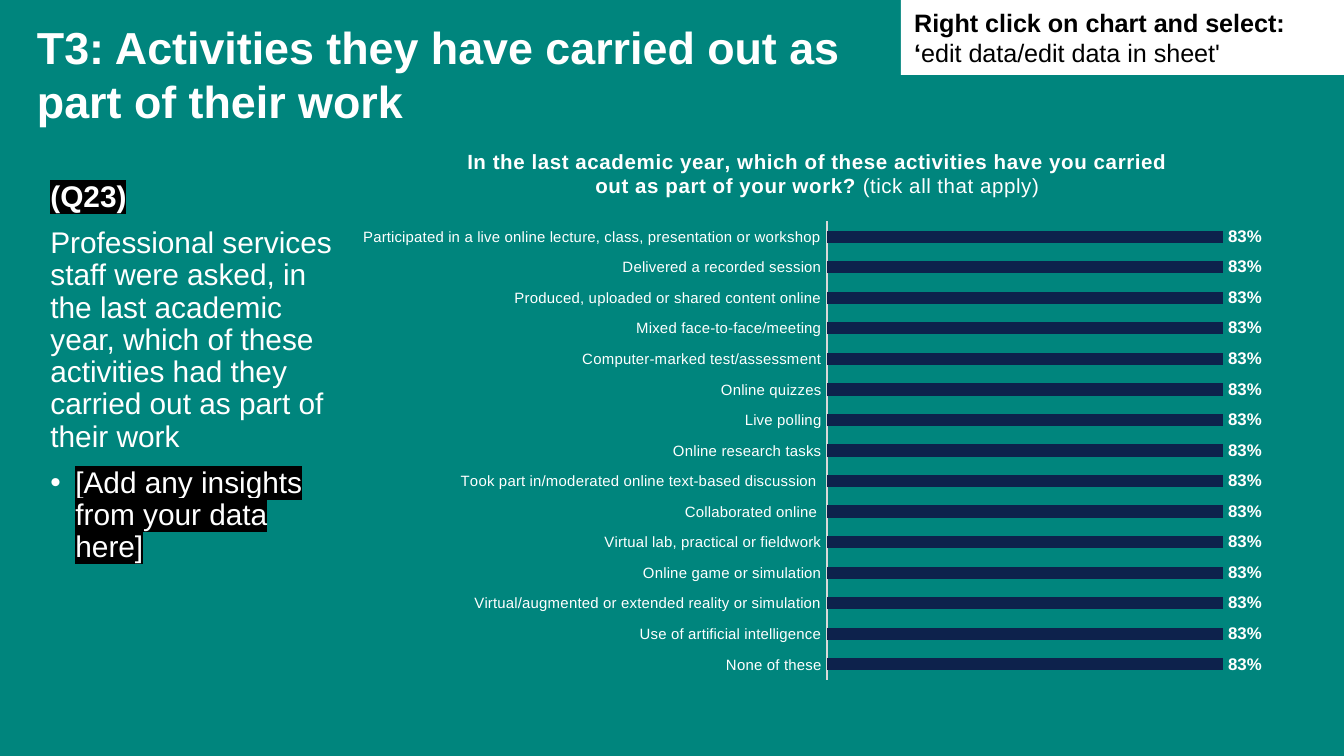
from lxml.etree import SubElement, fromstring
from pptx import Presentation
from pptx.chart.data import CategoryChartData
from pptx.dml.color import RGBColor
from pptx.enum.chart import XL_CHART_TYPE, XL_LABEL_POSITION, XL_TICK_MARK
from pptx.enum.shapes import MSO_SHAPE
from pptx.enum.text import MSO_ANCHOR, MSO_AUTO_SIZE, PP_ALIGN
from pptx.oxml.ns import nsdecls, qn
from pptx.util import Pt

PX = 914400 / 134.4
TEAL = RGBColor(0x00, 0x85, 0x7D)
NAVY = RGBColor(0x0D, 0x22, 0x4C)
GREY = RGBColor(0xD9, 0xD9, 0xD9)
WHITE = RGBColor(0xFF, 0xFF, 0xFF)
BLACK = RGBColor(0x00, 0x00, 0x00)


def set_font(font, size, bold=False, color=WHITE):
    font.name = "Arial"
    font.size = Pt(size)
    font.bold = bold
    font.color.rgb = color


def set_layout(element, index, **fractions):
    for layout in element.findall(qn("c:layout")):
        element.remove(layout)
    values = "".join(f'<c:{key} val="{value}"/>' for key, value in fractions.items())
    element.insert(index, fromstring(
        f'<c:layout {nsdecls("c")}><c:manualLayout>{values}</c:manualLayout></c:layout>'))


deck = Presentation()
deck.slide_width = round(1344 * PX)
deck.slide_height = round(756 * PX)
slide = deck.slides.add_slide(deck.slide_layouts[1])
slide.background.fill.solid()
slide.background.fill.fore_color.rgb = TEAL

title = slide.shapes.title
body = slide.placeholders[1]
for box, frame in ((title, (37, 20, 809, 50)), (body, (37, 175, 317, 532))):
    box.left, box.top, box.width, box.height = [round(value * PX) for value in frame]
    box.text_frame.word_wrap = True
    box.text_frame.auto_size = MSO_AUTO_SIZE.NONE
    box.text_frame.vertical_anchor = MSO_ANCHOR.TOP

title_text = title.text_frame
title_text.margin_left = title_text.margin_right = 0
title_text.margin_top = title_text.margin_bottom = 0
title_text.text = "T3: Activities they have carried out as part of their work"
title_text.paragraphs[0].alignment = PP_ALIGN.LEFT
set_font(title_text.paragraphs[0].font, 24, True)

notes = [
    ("(Q23)", True, True, False),
    ("Professional services staff were asked, in the last academic year, which of these "
     "activities had they carried out as part of their work", False, False, False),
    ("[Add any insights from your data here]", False, True, True),
]
for number, (text, bold, highlighted, bulleted) in enumerate(notes):
    para = body.text_frame.add_paragraph() if number else body.text_frame.paragraphs[0]
    span = para.add_run()
    span.text = text
    properties = para._p.get_or_add_pPr()
    indent = round(25 * PX) if bulleted else 0
    properties.set("marL", str(indent))
    properties.set("indent", str(-indent))
    if bulleted:
        SubElement(properties, qn("a:buChar")).set("char", "•")
    else:
        SubElement(properties, qn("a:buNone"))
    para.line_spacing = 0.9
    para.space_before = Pt(7.5 if number else 0)
    set_font(para.font, 16, bold)
    if highlighted:
        highlight = SubElement(span._r.get_or_add_rPr(), qn("a:highlight"))
        SubElement(highlight, qn("a:srgbClr")).set("val", str(BLACK))

activities = [
    "Participated in a live online lecture, class, presentation or workshop",
    "Delivered a recorded session",
    "Produced, uploaded or shared content online",
    "Mixed face-to-face/meeting",
    "Computer-marked test/assessment",
    "Online quizzes",
    "Live polling",
    "Online research tasks",
    "Took part in/moderated online text-based discussion ",
    "Collaborated online ",
    "Virtual lab, practical or fieldwork",
    "Online game or simulation",
    "Virtual/augmented or extended reality or simulation",
    "Use of artificial intelligence",
    "None of these",
]
data = CategoryChartData(number_format="0%")
data.categories = activities
data.add_series("Series 1", [0.83] * len(activities))
chart = slide.shapes.add_chart(
    XL_CHART_TYPE.BAR_CLUSTERED,
    *[round(value * PX) for value in (342, 132, 933, 559)], data).chart
set_font(chart.font, 10, color=BLACK)
chart.has_legend = False

question = chart.chart_title.text_frame.paragraphs[0]
set_font(question.font, 11, True)
for text, bold in (
    ("In the last academic year, which of these activities have you carried out "
     "as part of your work? ", True),
    ("(tick all that apply)", False),
):
    span = question.add_run()
    span.text = text
    set_font(span.font, 11, bold)
    span._r.get_or_add_rPr().set("spc", "20")
set_layout(chart.chart_title._element, 1, xMode="edge", yMode="edge", x=0.13, y=0.02)
set_layout(chart._chartSpace.chart.plotArea, 0, layoutTarget="inner",
           xMode="edge", yMode="edge", x=0.52, y=0.16, w=0.46, h=0.82)

category_axis = chart.category_axis
category_axis.reverse_order = True
category_axis.major_tick_mark = XL_TICK_MARK.NONE
category_axis.format.line.color.rgb = GREY
category_axis.format.line.width = Pt(0.75)
set_font(category_axis.tick_labels.font, 8)
value_axis = chart.value_axis
value_axis.visible = False
value_axis.has_major_gridlines = False
value_axis.minimum_scale = 0
value_axis.maximum_scale = 0.9

plot = chart.plots[0]
plot.gap_width = 150
plot.vary_by_categories = False
plot.series[0].format.fill.solid()
plot.series[0].format.fill.fore_color.rgb = NAVY
plot.has_data_labels = True
labels = plot.data_labels
labels.show_value = True
labels.number_format = "0%"
labels.number_format_is_linked = False
labels.position = XL_LABEL_POSITION.OUTSIDE_END
set_font(labels.font, 9, True)

hint = slide.shapes.add_shape(
    MSO_SHAPE.RECTANGLE, *[round(value * PX) for value in (901, 0, 443, 75)])
hint.shadow.inherit = False
hint.fill.solid()
hint.fill.fore_color.rgb = WHITE
hint.line.fill.background()
hint.text_frame.word_wrap = True
para = hint.text_frame.paragraphs[0]
para.alignment = PP_ALIGN.LEFT
for text, bold in (("Right click on chart and select: ‘", True),
                   ("edit data/edit data in sheet'", False)):
    span = para.add_run()
    span.text = text
    set_font(span.font, 13.5, bold, BLACK)

deck.save("out.pptx")
